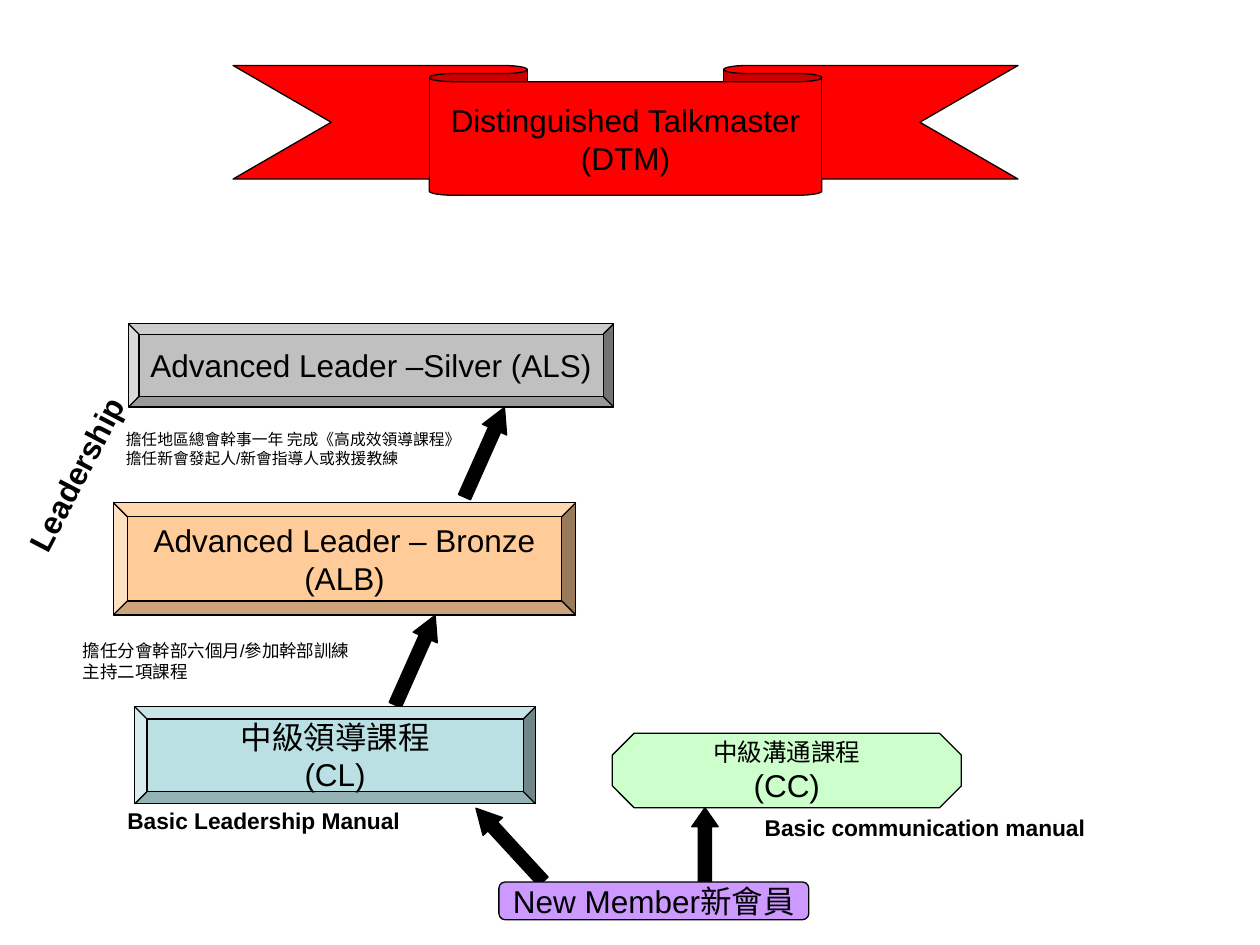
from pptx import Presentation
from pptx.dml.color import RGBColor
from pptx.enum.shapes import MSO_SHAPE as Shape
from pptx.enum.text import MSO_ANCHOR as Anchor, MSO_AUTO_SIZE as AutoSize, PP_ALIGN as Align
from pptx.util import Inches, Pt

BLACK = RGBColor(0x00, 0x00, 0x00)
RED = RGBColor(0xFF, 0x00, 0x00)
SILVER = RGBColor(0xC0, 0xC0, 0xC0)
BRONZE = RGBColor(0xFF, 0xCC, 0x99)
TEAL = RGBColor(0xBB, 0xE0, 0xE3)
GREEN = RGBColor(0xCC, 0xFF, 0xCC)
PURPLE = RGBColor(0xCC, 0x99, 0xFF)


def write_lines(frame, lines, align, bold=False):
    for index, (text, size) in enumerate(lines):
        para = frame.paragraphs[0] if index == 0 else frame.add_paragraph()
        para.alignment = align
        span = para.add_run()
        span.text = text
        span.font.name = "Arial"
        span.font.size = Pt(size)
        span.font.bold = bold
        span.font.color.rgb = BLACK


def add_block(page, kind, place, fill, adjustments=(), lines=(), rotation=0, bold=False):
    block = page.shapes.add_shape(kind, *map(Inches, place))
    block.shadow.inherit = False
    block.rotation = rotation
    for index, value in enumerate(adjustments):
        block.adjustments[index] = value
    if fill is None:
        block.fill.background()
        block.line.fill.background()
    else:
        block.fill.solid()
        block.fill.fore_color.rgb = fill
        block.line.color.rgb = BLACK
        block.line.width = Pt(0.75)
    if lines:
        frame = block.text_frame
        frame.word_wrap = False
        frame.vertical_anchor = Anchor.MIDDLE
        write_lines(frame, lines, Align.CENTER, bold)


def add_arrow(page, place, head, rotation=0):
    add_block(page, Shape.UP_ARROW, place, BLACK, (0.5, head), rotation=rotation)


def add_note(page, place, lines, align=Align.LEFT, bold=False, spacing=None):
    box = page.shapes.add_textbox(*map(Inches, place))
    frame = box.text_frame
    frame.word_wrap = True
    frame.auto_size = AutoSize.SHAPE_TO_FIT_TEXT
    write_lines(frame, lines, align, bold)
    if spacing:
        frame.paragraphs[0].line_spacing = spacing


def main():
    deck = Presentation()
    deck.slide_width, deck.slide_height = Inches(10), Inches(7.5)
    page = deck.slides.add_slide(deck.slide_layouts[6])

    add_arrow(page, (3.94, 6.31, 0.21, 0.79), 0.94, 317.4)
    add_arrow(page, (5.49, 6.41, 0.21, 0.59), 0.72)
    add_block(page, Shape.ROUNDED_RECTANGLE, (3.96, 7, 2.46, 0.3), PURPLE,
              lines=[("New Member新會員", 18)])
    add_block(page, Shape.BEVEL, (0.9, 3.99, 3.67, 0.89), BRONZE,
              lines=[("Advanced Leader – Bronze", 18), ("(ALB)", 18)])
    add_block(page, Shape.DOWN_RIBBON, (1.85, 0.52, 6.23, 1.03), RED, (0.125, 0.5),
              [("Distinguished Talkmaster", 18), ("(DTM)", 18)])
    add_block(page, Shape.OVAL, (-0.3, 3.45, 1.8, 0.62), None,
              lines=[("Leadership", 18)], rotation=297.6, bold=True)
    add_note(page, (5.97, 6.41, 3.12, 0.31), [("Basic communication manual", 13)], bold=True)
    add_block(page, Shape.BEVEL, (1.02, 2.57, 3.85, 0.66), SILVER,
              lines=[("Advanced Leader –Silver (ALS)", 18)])
    add_note(page, (0.71, 6.41, 2.56, 0.25), [("Basic Leadership Manual", 13)],
             Align.RIGHT, bold=True, spacing=0.7)
    for left, top in ((3.74, 3.2), (3.19, 4.85)):
        add_arrow(page, (left, top, 0.21, 0.78), 0.92, 24)
    add_note(page, (0.9, 3.36, 2.94, 0.39),
             [("擔任地區總會幹事一年 完成《高成效領導課程》", 9),
              ("擔任新會發起人/新會指導人或救援教練", 9)])
    add_note(page, (0.56, 5.03, 2.38, 0.43),
             [("擔任分會幹部六個月/參加幹部訓練", 10), ("主持二項課程", 10)])
    add_block(page, Shape.BEVEL, (1.07, 5.61, 3.18, 0.77), TEAL,
              lines=[("中級領導課程", 18), ("(CL)", 18)])
    add_block(page, Shape.OCTAGON, (4.86, 5.82, 2.77, 0.59), GREEN,
              lines=[("中級溝通課程", 14), ("(CC)", 18)])

    deck.save("out.pptx")


if __name__ == "__main__":
    main()
